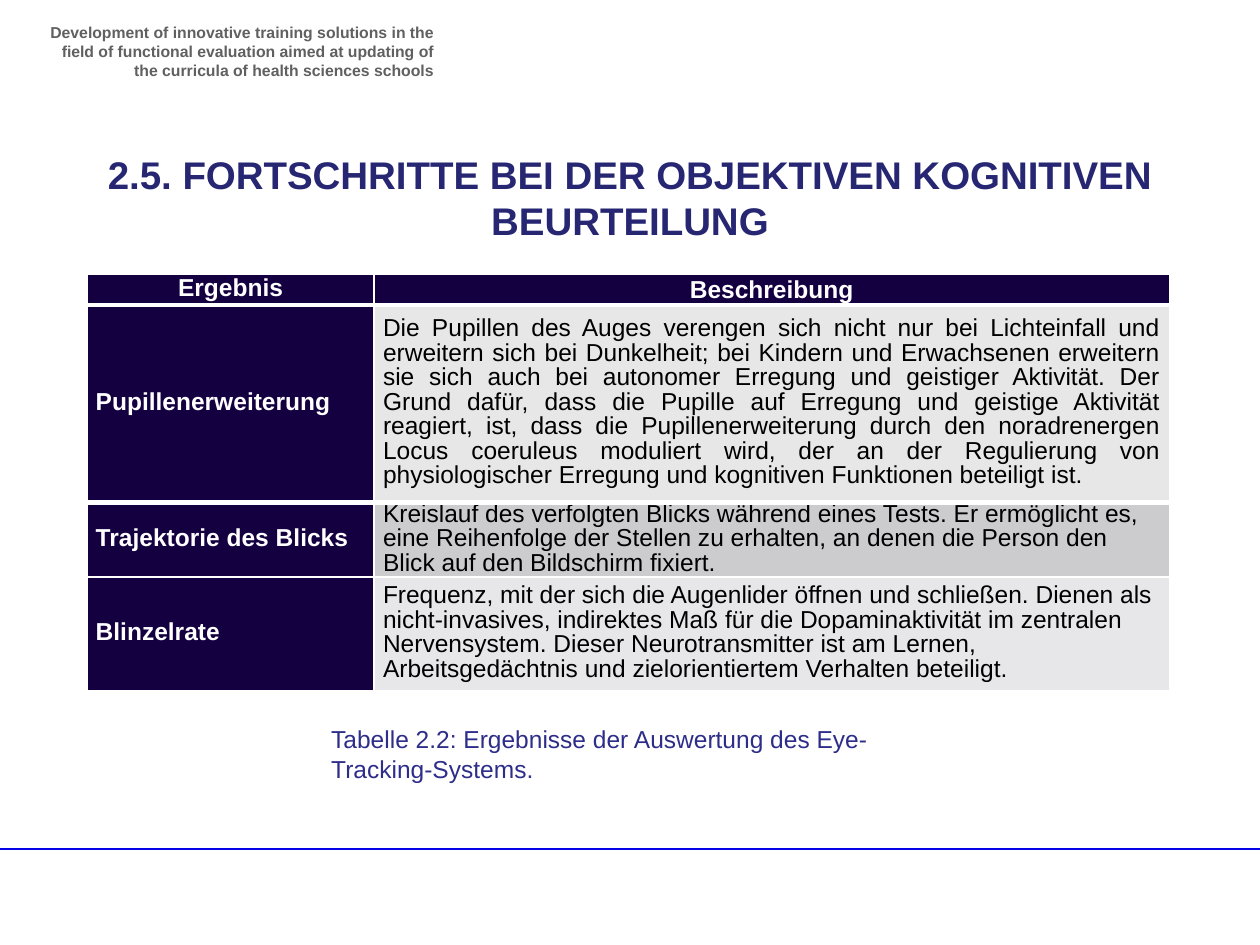
"""Build the slide on advances in objective cognitive assessment."""
import pptx
import pptx.dml.color
import pptx.enum.text
import pptx.oxml
import pptx.oxml.ns
import pptx.util
from pptx.util import Inches

ALIGN = pptx.enum.text.PP_ALIGN
NAVY, WHITE, BLACK = "140041", "FFFFFF", "000000"

PROJECT = ("Development of innovative training solutions in the ﬁeld of functional evaluation "
           "aimed at updating of the curricula of health sciences schools")
TITLE = "2.5. FORTSCHRITTE BEI DER OBJEKTIVEN KOGNITIVEN BEURTEILUNG"
CAPTION = "Tabelle 2.2: Ergebnisse der Auswertung des Eye-Tracking-Systems."
HEADINGS = ("Ergebnis", "Beschreibung")
RESULTS = [
    ("Pupillenerweiterung",
     "Die Pupillen des Auges verengen sich nicht nur bei Lichteinfall und erweitern sich bei "
     "Dunkelheit; bei Kindern und Erwachsenen erweitern sie sich auch bei autonomer Erregung und "
     "geistiger Aktivität. Der Grund dafür, dass die Pupille auf Erregung und geistige Aktivität "
     "reagiert, ist, dass die Pupillenerweiterung durch den noradrenergen Locus coeruleus "
     "moduliert wird, der an der Regulierung von physiologischer Erregung und kognitiven "
     "Funktionen beteiligt ist.", 1.58, "E7E7E8", ALIGN.JUSTIFY, 3),
    ("Trajektorie des Blicks",
     "Kreislauf des verfolgten Blicks während eines Tests. Er ermöglicht es, eine Reihenfolge der "
     "Stellen zu erhalten, an denen die Person den Blick auf den Bildschirm fixiert.",
     0.59, "CCCCCF", ALIGN.LEFT, 1),
    ("Blinzelrate",
     "Frequenz, mit der sich die Augenlider öffnen und schließen. Dienen als nicht-invasives, "
     "indirektes Maß für die Dopaminaktivität im zentralen Nervensystem. Dieser Neurotransmitter "
     "ist am Lernen, Arbeitsgedächtnis und zielorientiertem Verhalten beteiligt.",
     0.9, "E7E7E9", ALIGN.LEFT, 1),
]
COLUMNS = (2.28, 6.31)
TABLE_LEFT = 0.69


def rgb(value):
    return pptx.dml.color.RGBColor.from_string(value)


def write(frame, text, size=14, color=BLACK, bold=False, align=ALIGN.LEFT, spacing=None):
    frame.word_wrap = True
    paragraph = frame.paragraphs[0]
    paragraph.alignment = align
    if spacing:
        paragraph.line_spacing = pptx.util.Pt(spacing)
    run = paragraph.add_run()
    run.text = text
    run.font.name = "Arial"
    run.font.size = pptx.util.Pt(size)
    run.font.bold = bold
    run.font.color.rgb = rgb(color)


def add_text(slide, box, text, **style):
    shape = slide.shapes.add_textbox(*map(Inches, box))
    write(shape.text_frame, text, **style)


def set_borders(cell, bottom):
    properties = cell._tc.get_or_add_tcPr()
    for index, (side, width) in enumerate((("L", 1), ("R", 1), ("T", 1), ("B", bottom))):
        properties.insert(index, pptx.oxml.parse_xml(
            f'<a:ln{side} {pptx.oxml.ns.nsdecls("a")} w="{pptx.util.Pt(width)}">'
            f'<a:solidFill><a:srgbClr val="{WHITE}"/></a:solidFill></a:ln{side}>'))


def fill_cell(cell, text, fill, bottom, **style):
    cell.margin_left = cell.margin_right = Inches(0.07)
    cell.margin_top = cell.margin_bottom = 0
    cell.vertical_anchor = pptx.enum.text.MSO_ANCHOR.MIDDLE
    cell.fill.solid()
    cell.fill.fore_color.rgb = rgb(fill)
    write(cell.text_frame, text, **style)
    set_borders(cell, bottom)


def add_table(slide, top, heights):
    frame = slide.shapes.add_table(
        len(heights), len(COLUMNS), Inches(TABLE_LEFT), Inches(top),
        Inches(sum(COLUMNS)), Inches(sum(heights)))
    table = frame.table
    for column, width in zip(table.columns, COLUMNS):
        column.width = Inches(width)
    for row, height in zip(table.rows, heights):
        row.height = Inches(height)
    return table


def add_rule(slide):
    rule = slide.shapes.add_connector(
        pptx.enum.shapes.MSO_CONNECTOR.STRAIGHT,
        Inches(-0.05), Inches(6.74), Inches(10), Inches(6.74))
    rule.line.color.rgb = rgb("0404E6")
    rule.line.width = pptx.util.Pt(1)
    rule._element.spPr.append(
        pptx.oxml.parse_xml(f'<a:effectLst {pptx.oxml.ns.nsdecls("a")}/>'))


def main():
    presentation = pptx.Presentation()
    presentation.slide_width, presentation.slide_height = Inches(10), Inches(7.5)
    slide = presentation.slides.add_slide(presentation.slide_layouts[6])

    add_rule(slide)
    add_text(slide, (0.28, 0.13, 3.26, 0.47), PROJECT, size=9, color="606060",
             bold=True, align=ALIGN.RIGHT)
    add_text(slide, (0.1, 1.15, 9.8, 0.47), TITLE, size=22, color="262673",
             bold=True, align=ALIGN.CENTER)

    results = add_table(slide, 2.41, [result[2] for result in RESULTS])
    for row, (name, description, _, fill, align, bottom) in enumerate(RESULTS):
        fill_cell(results.cell(row, 0), name, NAVY, bottom, color=WHITE, bold=True, spacing=14)
        fill_cell(results.cell(row, 1), description, fill, bottom, align=align, spacing=14)

    header = add_table(slide, 2.18, [0.24])
    for column, (heading, spacing) in enumerate(zip(HEADINGS, (14, None))):
        fill_cell(header.cell(0, column), heading, NAVY, 3, color=WHITE, bold=True,
                  align=ALIGN.CENTER, spacing=spacing)

    add_text(slide, (2.53, 5.7, 5.15, 0.34), CAPTION, color="2D2D8A")
    presentation.save("out.pptx")


if __name__ == "__main__":
    main()
